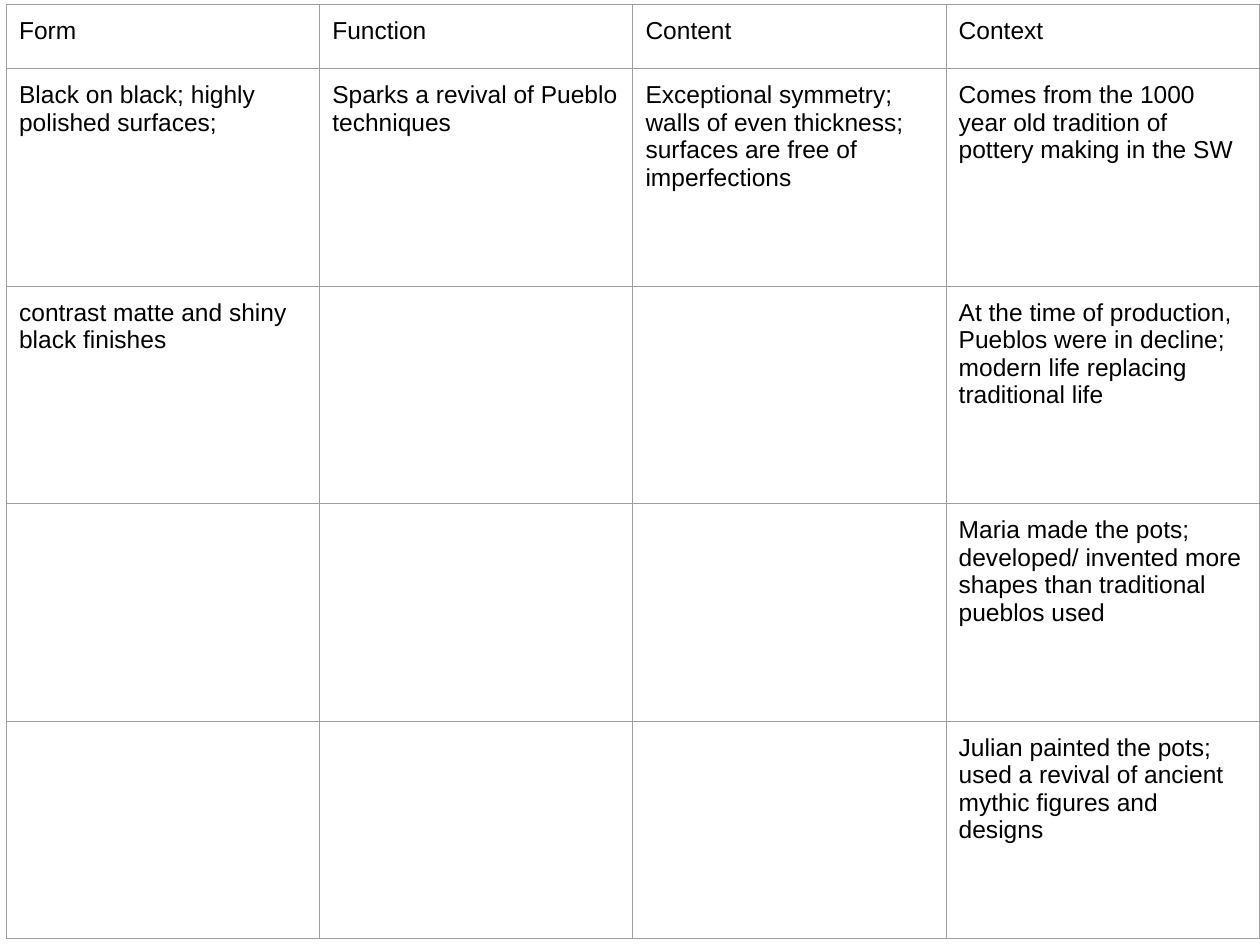
from lxml.etree import SubElement
from pptx import Presentation
from pptx.dml.color import RGBColor
from pptx.oxml.ns import qn
from pptx.util import Pt

COLORS = {"text": "000000", "border": "9E9E9E"}
FONT = {"name": "Arial", "size": Pt(14), "bold": False}
MARGINS = {f"margin_{side}": Pt(7.2) for side in ("left", "top", "right", "bottom")}
BORDER_WIDTH = Pt(0.75)
HEADER_HEIGHT = 36.6

# Each heading with its notes, from top to bottom
COLUMNS = {
    "Form": [
        "Black on black; highly polished surfaces;",
        "contrast matte and shiny black finishes",
    ],
    "Function": ["Sparks a revival of Pueblo techniques"],
    "Content": [
        "Exceptional symmetry; walls of even thickness; "
        "surfaces are free of imperfections",
    ],
    "Context": [
        "Comes from the 1000 year old tradition of pottery making in the SW",
        "At the time of production, Pueblos were in decline; "
        "modern life replacing traditional life",
        "Maria made the pots; developed/ invented more shapes "
        "than traditional pueblos used",
        "Julian painted the pots; used a revival of ancient "
        "mythic figures and designs",
    ],
}


def set_attrs(obj, values):
    for name, value in values.items():
        setattr(obj, name, value)


def add_borders(cell):
    tc_pr = cell._tc.get_or_add_tcPr()
    for tag in ("a:lnL", "a:lnR", "a:lnT", "a:lnB"):
        ln = SubElement(tc_pr, qn(tag), w=str(BORDER_WIDTH))
        fill = SubElement(ln, qn("a:solidFill"))
        SubElement(fill, qn("a:srgbClr"), val=COLORS["border"])


def format_cell(cell, text):
    set_attrs(cell, MARGINS)
    add_borders(cell)
    cell.fill.background()
    p = cell.text_frame.paragraphs[0]
    set_attrs(p.font, FONT)
    if text:
        r = p.add_run()
        r.text = text
        set_attrs(r.font, FONT)
        r.font.color.rgb = RGBColor.from_string(COLORS["text"])


def add_analysis_table(slide, left, top, width, height):
    n_notes = max(len(notes) for notes in COLUMNS.values())
    table = slide.shapes.add_table(
        n_notes + 1, len(COLUMNS), Pt(left), Pt(top), Pt(width), Pt(height)
    ).table
    set_attrs(table, {"first_row": False, "horz_banding": False})

    # Short header row, equal rows below it
    table.rows[0].height = Pt(HEADER_HEIGHT)
    for i in range(1, n_notes + 1):
        table.rows[i].height = Pt((height - HEADER_HEIGHT) / n_notes)

    for col, (heading, notes) in enumerate(COLUMNS.items()):
        table.columns[col].width = Pt(width / len(COLUMNS))
        texts = [heading] + notes + [""] * (n_notes - len(notes))
        for row, text in enumerate(texts):
            format_cell(table.cell(row, col), text)


def main():
    prs = Presentation()
    prs.slide_width, prs.slide_height = Pt(720), Pt(540)
    slide = prs.slides.add_slide(prs.slide_layouts[6])
    add_analysis_table(slide, 3.7, 2.6, 716, 533.8)
    prs.save("out.pptx")


if __name__ == "__main__":
    main()
